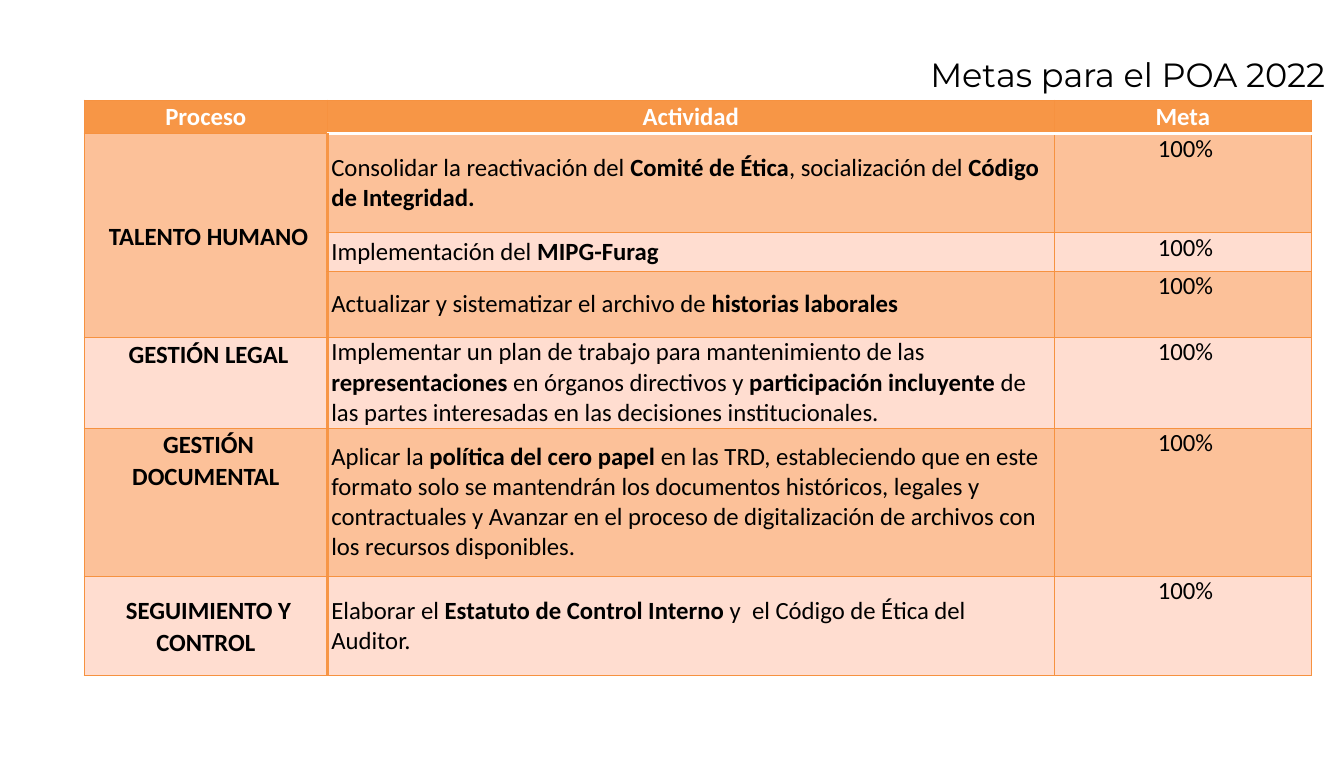
from dataclasses import dataclass

from lxml.etree import SubElement
from pptx import Presentation
from pptx.dml.color import RGBColor
from pptx.enum.text import MSO_ANCHOR as Anchor, MSO_AUTO_SIZE as AutoSize, PP_ALIGN as Align
from pptx.oxml.ns import qn
from pptx.util import Cm, Pt

COLORS = {
    "text": "000000",
    "white": "FFFFFF",
    "header": "F79646",
    "grid": "F69240",
    "dark": "FCC199",
    "light": "FFDDD0",
}
HEADINGS = ("Proceso", "Actividad", "Meta")
COLUMN_WIDTHS = (6.25, 18.67, 6.6)
HEADER_HEIGHT = 0.86


@dataclass(frozen=True)
class Goal:
    height: float
    process: str
    activity: str
    target: str = " 100%"
    process_anchor: Anchor = Anchor.TOP
    process_rows: int = 1


GOALS = (
    Goal(2.54, " TALENTO HUMANO",
         "Consolidar la reactivación del **Comité de Ética**, socialización del "
         "**Código de Integridad.**",
         process_anchor=Anchor.MIDDLE, process_rows=3),
    Goal(0.99, "", "Implementación del **MIPG-Furag**"),
    Goal(1.7, "", "Actualizar y sistematizar el archivo de **historias laborales**"),
    Goal(2.29, " GESTIÓN LEGAL",
         "Implementar un plan de trabajo para mantenimiento de las **representaciones** "
         "en órganos directivos y **participación incluyente **de las partes interesadas "
         "en las decisiones institucionales."),
    Goal(3.81, " GESTIÓN DOCUMENTAL",
         "Aplicar la **política del cero papel** en las TRD, estableciendo que en este "
         "formato solo se mantendrán los documentos históricos, legales y contractuales "
         "y Avanzar en el proceso de digitalización de archivos con los recursos disponibles."),
    Goal(2.54, " SEGUIMIENTO Y CONTROL",
         "Elaborar el **Estatuto de Control Interno** y  el Código de Ética del Auditor.",
         process_anchor=Anchor.MIDDLE),
)


def rgb(name: str) -> RGBColor:
    return RGBColor.from_string(COLORS[name])


def set_border(cell, side: str, color: str, width: float) -> None:
    line = SubElement(cell._tc.get_or_add_tcPr(), qn(f"a:ln{side}"), w=str(Pt(width)))
    fill = SubElement(line, qn("a:solidFill"))
    SubElement(fill, qn("a:srgbClr"), val=COLORS[color])


def style_cell(cell, row: int, column: int, fill: str) -> None:
    borders = {side: ("grid", 0.75) for side in "LRTB"}
    if column and row < 2:
        borders["T" if row else "B"] = ("white", 2)
    if row and column < 2:
        borders["L" if column else "R"] = ("header", 2)
    for side, (color, width) in borders.items():
        set_border(cell, side, color, width)
    cell.fill.solid()
    cell.fill.fore_color.rgb = rgb(fill)
    cell.margin_left = cell.margin_right = Cm(0.1)
    cell.margin_top = cell.margin_bottom = 0


def write_cell(cell, text: str, color: str = "text", bold: bool = False,
               align: Align = Align.CENTER, anchor: Anchor = Anchor.TOP) -> None:
    cell.vertical_anchor = anchor
    paragraph = cell.text_frame.paragraphs[0]
    paragraph.alignment = align
    if bold:
        paragraph.line_spacing = 1.07
        paragraph.space_after = Pt(8)
    font = paragraph.font
    font.name, font.size, font.bold = "Calibri", Pt(18), bold
    font.color.rgb = rgb(color)
    for index, part in enumerate(text.split("**")):
        if part:
            run = paragraph.add_run()
            run.text = part
            run.font.bold = bold or index % 2 == 1
            run.font.size = Pt(18)
            run.font.name = "Calibri"
            run.font.color.rgb = rgb(color)


def add_title(slide, text: str) -> None:
    title = slide.shapes.title
    title.left, title.top, title.width, title.height = Cm(1.5), Cm(1.27), Cm(32.79), Cm(1.3)
    frame = title.text_frame
    frame.text = text
    frame.word_wrap = True
    frame.auto_size = AutoSize.NONE
    frame.vertical_anchor = Anchor.TOP
    paragraph = frame.paragraphs[0]
    paragraph.alignment = Align.RIGHT
    font = paragraph.font
    font.name, font.size = "Montserrat", Pt(24.4)
    font.color.rgb = rgb("text")


def add_goals(slide) -> None:
    heights = [HEADER_HEIGHT] + [goal.height for goal in GOALS]
    table = slide.shapes.add_table(
        len(heights), len(HEADINGS), Cm(2.16), Cm(2.57),
        Cm(sum(COLUMN_WIDTHS)), Cm(sum(heights))).table
    table.horz_banding = False
    for column, width in zip(table.columns, COLUMN_WIDTHS):
        column.width = Cm(width)
    for row, height in enumerate(heights):
        table.rows[row].height = Cm(height)
        fill = ("dark" if row % 2 else "light") if row else "header"
        for column in range(len(HEADINGS)):
            style_cell(table.cell(row, column), row, column, fill)
    for column, heading in enumerate(HEADINGS):
        write_cell(table.cell(0, column), heading, "white", bold=True)
    for row, goal in enumerate(GOALS, 1):
        process = table.cell(row, 0)
        if goal.process:
            write_cell(process, goal.process, bold=True, anchor=goal.process_anchor)
        if goal.process_rows > 1:
            process.merge(table.cell(row + goal.process_rows - 1, 0))
        write_cell(table.cell(row, 1), goal.activity, align=Align.LEFT, anchor=Anchor.MIDDLE)
        write_cell(table.cell(row, 2), goal.target)


def main() -> None:
    presentation = Presentation()
    presentation.slide_width, presentation.slide_height = Cm(34.52), Cm(19.51)
    slide = presentation.slides.add_slide(presentation.slide_layouts[5])
    add_title(slide, "Metas para el POA 2022")
    add_goals(slide)
    presentation.save("out.pptx")


if __name__ == "__main__":
    main()
